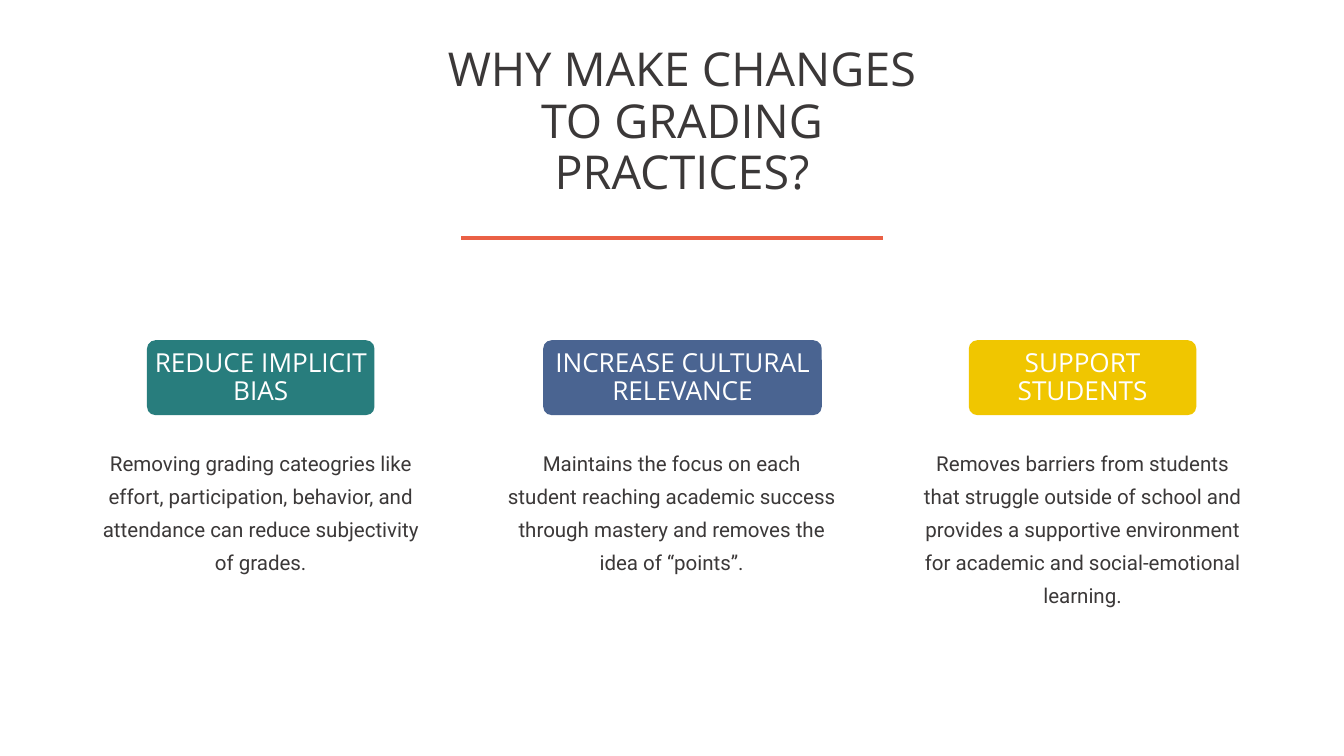
"""Build a slide giving three reasons to change grading practices."""
from lxml import etree
from pptx import Presentation
from pptx.dml.color import RGBColor as RGB
from pptx.enum.shapes import MSO_CONNECTOR as CONN, MSO_SHAPE as SHAPE
from pptx.enum.text import MSO_AUTO_SIZE as AUTO, PP_ALIGN as ALIGN
from pptx.oxml.ns import qn
from pptx.util import Pt

PX = 9525
COLORS = {
    "ink": "3B3838",
    "white": "FFFFFF",
    "rule": "EA6045",
    "teal": "287D7D",
    "blue": "4A6491",
    "yellow": "F0C600",
}
FORMATS = {
    "title": {"name": "Open Sans", "size": Pt(50), "leading": Pt(55), "color": "ink"},
    "label": {"name": "Open Sans", "size": Pt(28), "leading": Pt(30.8), "color": "white"},
    "body": {"name": "Roboto", "size": Pt(22), "leading": Pt(35.2), "color": "ink"},
}
REASONS = [
    ("REDUCE IMPLICIT BIAS", "teal", 210, 325, 181,
     "Removing grading cateogries like effort, participation, behavior, "
     "and attendance can reduce subjectivity of grades."),
    ("INCREASE CULTURAL RELEVANCE", "blue", 776, 398, 181,
     "Maintains the focus on each student reaching academic success "
     "through mastery and removes the idea of “points”."),
    ("SUPPORT STUDENTS", "yellow", 1384, 325, 228,
     "Removes barriers from students that struggle outside of school and "
     "provides a supportive environment for academic and social-emotional learning."),
]
BODY_LEFT, BODY_STEP, BODY_WIDTH = 137, 587, 471
CARD_TOP, CARD_HEIGHT, CARD_RADIUS = 486, 107, 12


def px(*lengths):
    return [n * PX for n in lengths]


def add_text(s, box, text, style):
    fmt = FORMATS[style]
    tf = s.shapes.add_textbox(*px(*box)).text_frame
    settings = {"word_wrap": True, "auto_size": AUTO.SHAPE_TO_FIT_TEXT,
                "margin_left": 0, "margin_top": 0, "margin_right": 0, "margin_bottom": 0}
    for key, value in settings.items():
        setattr(tf, key, value)
    p = tf.paragraphs[0]
    p.alignment = ALIGN.CENTER
    p.line_spacing = fmt["leading"]
    r = p.add_run()
    r.text = text
    for key in ("name", "size"):
        setattr(r.font, key, fmt[key])
    r.font.color.rgb = RGB.from_string(COLORS[fmt["color"]])


prs = Presentation()
prs.slide_width, prs.slide_height = px(1920, 1080)
s = prs.slides.add_slide(prs.slide_layouts[6])

rule = s.shapes.add_connector(CONN.STRAIGHT, *px(659, 340, 1261, 340))
rule.line.color.rgb = RGB.from_string(COLORS["rule"])
rule.line.width = Pt(5.25)
etree.SubElement(rule._element.spPr, qn("a:effectLst"))

add_text(s, (608, 64, 733, 222), "WHY MAKE CHANGES TO GRADING PRACTICES?", "title")

for i, (label, color, left, width, height, body) in enumerate(REASONS):
    add_text(s, (BODY_LEFT + i * BODY_STEP, 633, BODY_WIDTH, height), body, "body")
    sp = s.shapes.add_shape(SHAPE.ROUNDED_RECTANGLE, *px(left, CARD_TOP, width, CARD_HEIGHT))
    sp.adjustments[0] = CARD_RADIUS / CARD_HEIGHT
    sp.shadow.inherit = False
    sp.fill.solid()
    sp.fill.fore_color.rgb = RGB.from_string(COLORS[color])
    sp.line.fill.background()
    add_text(s, (left, CARD_TOP + 12, width, 83), label, "label")

prs.save("out.pptx")
